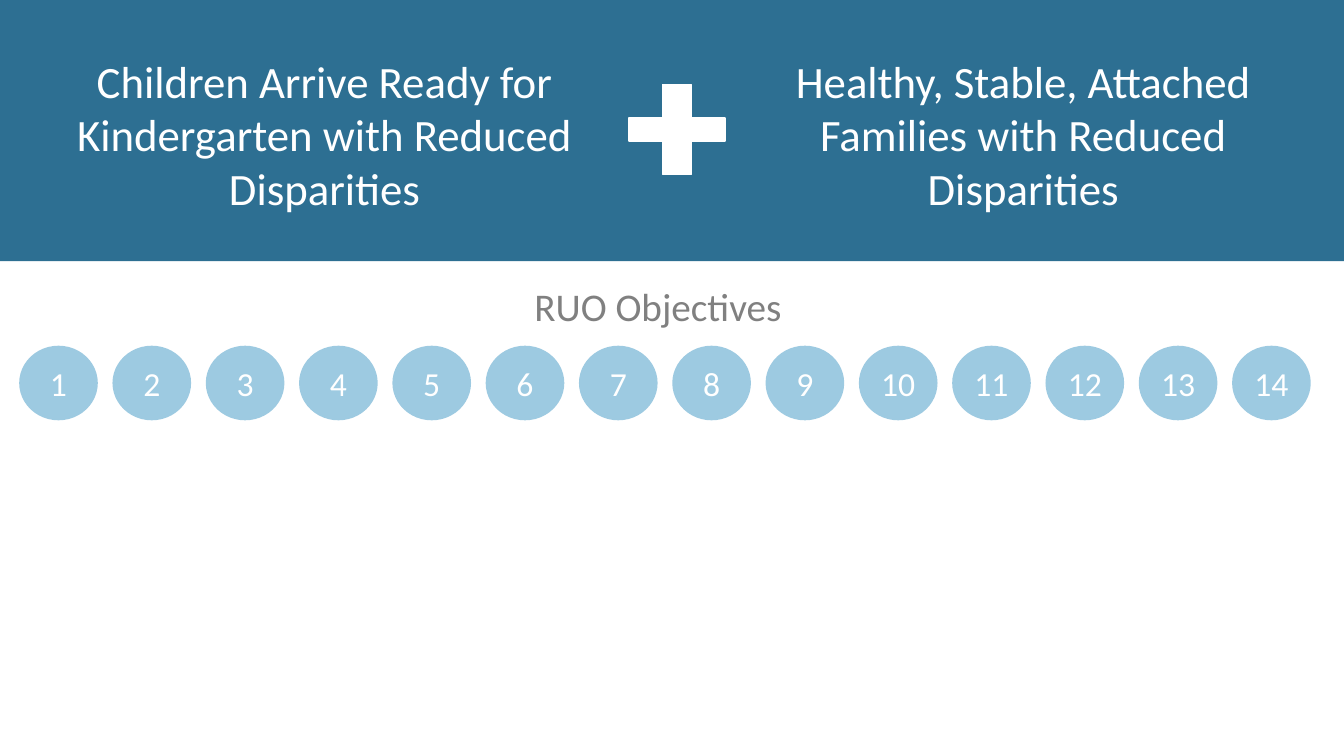
from dataclasses import dataclass

from pptx import Presentation
from pptx import util as u
from pptx.dml.color import RGBColor
from pptx.enum import shapes, text


@dataclass(frozen=True)
class Theme:
    font: str = "Calibri"
    banner: str = "2D6F92"
    circle: str = "9DCAE1"
    light: str = "FFFFFF"
    heading: str = "808080"
    goal_size: int = 32
    heading_size: int = 28
    number_size: int = 24


THEME = Theme()
WIDTH, HEIGHT = 13.33, 7.5

# Row of numbered circles: first and last left edges set the pitch
OBJECTIVES = 14
FIRST_LEFT, LAST_LEFT = 0.19, 12.22
PITCH = (LAST_LEFT - FIRST_LEFT) / (OBJECTIVES - 1)
CIRCLE_TOP, CIRCLE_WIDTH, CIRCLE_HEIGHT = 3.43, 0.78, 0.74

# Goals: left, width, height
GOAL_TOP = 0.48
GOALS = [
    ("Children Arrive Ready for Kindergarten with Reduced Disparities", 0.59, 5.26, 1.72),
    ("Healthy, Stable, Attached Families with Reduced Disparities", 7.62, 5.06, 2.26),
]


def inches(*lengths):
    return [u.Inches(length) for length in lengths]


def write(box, words, size, color, align=text.PP_ALIGN.CENTER):
    frame = box.text_frame
    frame.text = words
    para = frame.paragraphs[0]
    para.alignment = align
    para.font.name = THEME.font
    para.font.size = u.Pt(size)
    para.font.color.rgb = RGBColor.from_string(color)
    return frame


def add_filled(page, kind, place, color):
    shape = page.shapes.add_shape(kind, *inches(*place))
    shape.shadow.inherit = False
    shape.fill.solid()
    shape.fill.fore_color.rgb = RGBColor.from_string(color)
    shape.line.fill.background()
    return shape


def add_plus(page, place):
    plus = add_filled(page, shapes.MSO_SHAPE.CROSS, place, THEME.light)
    plus.adjustments[0] = 0.373
    plus.line.color.rgb = RGBColor.from_string(THEME.light)
    plus.line.width = u.Pt(1)


def add_goal(page, words, left, width, height):
    box = page.shapes.add_textbox(*inches(left, GOAL_TOP, width, height))
    frame = write(box, words, THEME.goal_size, THEME.light)
    frame.word_wrap = True


def add_objective(page, number):
    left = FIRST_LEFT + (number - 1) * PITCH
    place = (left, CIRCLE_TOP, CIRCLE_WIDTH, CIRCLE_HEIGHT)
    circle = add_filled(page, shapes.MSO_SHAPE.OVAL, place, THEME.circle)
    frame = write(circle, str(number), THEME.number_size, THEME.light)
    frame.vertical_anchor = text.MSO_ANCHOR.MIDDLE
    frame.margin_left = frame.margin_right = 0


def set_heading(page, words):
    title = page.shapes.title
    title.left, title.top, title.width, title.height = inches(5.2, 2.75, 2.68, 0.57)
    frame = write(title, words, THEME.heading_size, THEME.heading, text.PP_ALIGN.LEFT)
    frame.vertical_anchor = text.MSO_ANCHOR.TOP
    frame.auto_size = text.MSO_AUTO_SIZE.NONE
    frame.word_wrap = False


def main():
    deck = Presentation()
    deck.slide_width, deck.slide_height = inches(WIDTH, HEIGHT)
    page = deck.slides.add_slide(deck.slide_layouts.get_by_name("Title Only"))

    # Banner with the two goals joined by a plus sign
    add_filled(page, shapes.MSO_SHAPE.RECTANGLE, (0, 0, WIDTH, 2.59), THEME.banner)
    for goal in GOALS:
        add_goal(page, *goal)
    add_plus(page, (6.24, 0.84, 0.95, 0.89))

    # Objectives
    set_heading(page, "RUO Objectives")
    for number in range(1, OBJECTIVES + 1):
        add_objective(page, number)

    deck.save("out.pptx")


if __name__ == "__main__":
    main()
